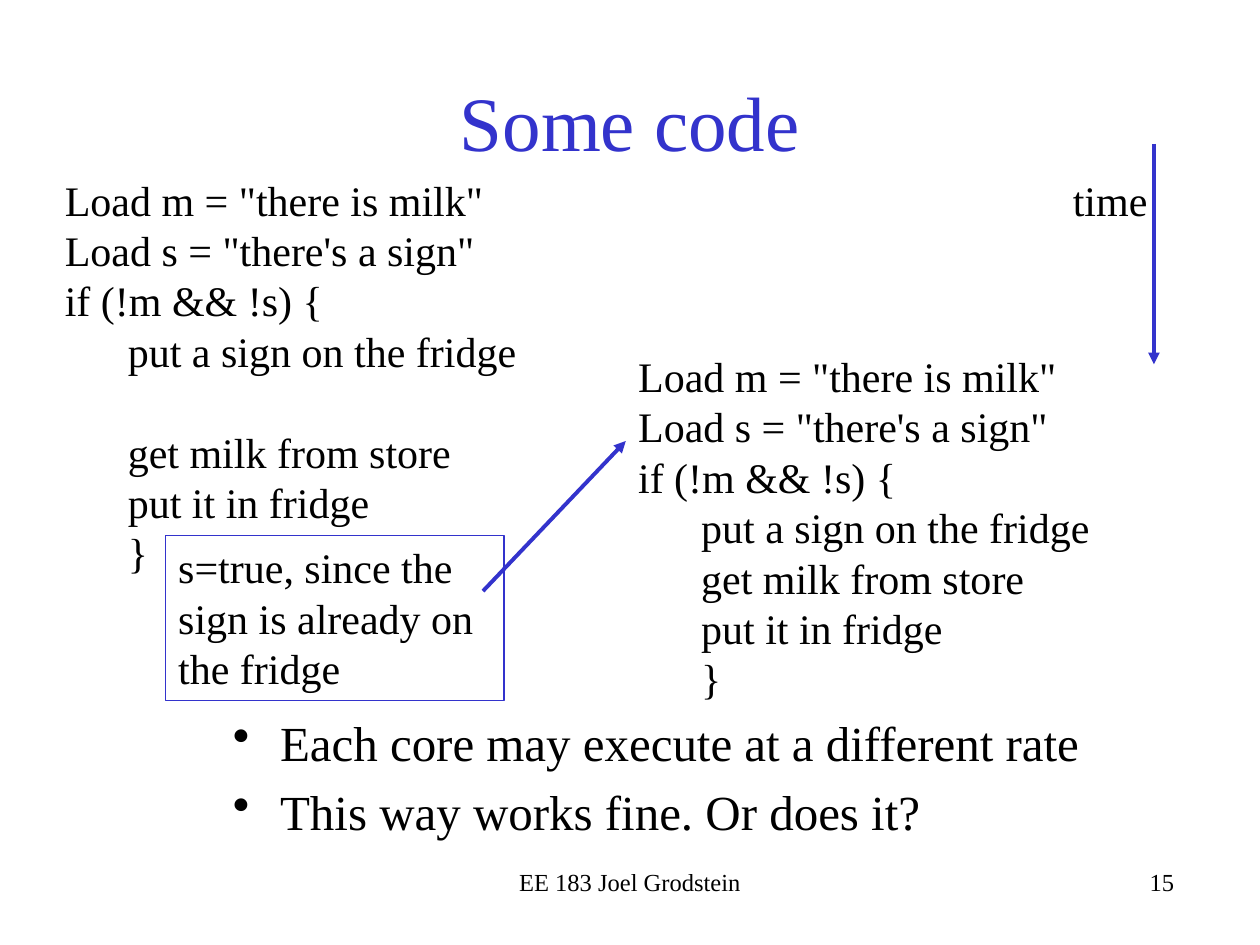
import pptx
import pptx.dml.color
import pptx.enum.shapes
import pptx.enum.text
import pptx.oxml
import pptx.oxml.ns
import pptx.util
from lxml import etree

Pt = pptx.util.Pt
ALIGN = pptx.enum.text.PP_ALIGN
BLUE, BLACK = "3333CC", "000000"

deck = pptx.Presentation()
deck.slide_width = pptx.util.Inches(10)
deck.slide_height = pptx.util.Inches(7.5)
slide = deck.slides.add_slide(deck.slide_layouts[6])

# The slide is a grid of 120 columns by 90 rows
UNIT = deck.slide_width / 120


def color(hex_value):
    return pptx.dml.color.RGBColor.from_string(hex_value)


def write(grid_box, lines, size=24, hue=BLACK, align=ALIGN.LEFT):
    """Add a text box at (column, row, columns, rows) with one paragraph a line."""
    box = slide.shapes.add_textbox(*(round(n * UNIT) for n in grid_box))
    box.text_frame.word_wrap = True
    box.text_frame.text = "\n".join(lines)
    for paragraph in box.text_frame.paragraphs:
        paragraph.alignment = align
        style = {"name": "Times New Roman", "size": Pt(size)}
        for key, value in style.items():
            setattr(paragraph.font, key, value)
        paragraph.font.color.rgb = color(hue)
    return box


write((38, 82, 75, 6), ["15"], size=14, align=ALIGN.RIGHT)
title = write((9, 4, 102, 15), ["Some code"], size=44, hue=BLUE, align=ALIGN.CENTER)
title.text_frame.vertical_anchor = pptx.enum.text.MSO_ANCHOR.MIDDLE

remarks = write((21, 67.3, 91.7, 14.8),
                ["Each core may execute at a different rate",
                 "This way works fine. Or does it?"], size=28)
for paragraph in remarks.text_frame.paragraphs:
    paragraph.space_before = Pt(5.6)
    properties = paragraph._p.get_or_add_pPr()
    properties.set("marL", str(Pt(27)))
    properties.set("indent", str(-Pt(27)))
    bullet = etree.SubElement(properties, pptx.oxml.ns.qn("a:buChar"))
    bullet.set("char", "•")

write((41, 82, 38, 6), ["EE 183 Joel Grodstein"], size=14, align=ALIGN.CENTER)

# Both cores run the same code; the first one pauses before getting milk
code = ['Load m = "there is milk"', 'Load s = "there\'s a sign"', "if (!m && !s) {",
        "put a sign on the fridge", "get milk from store", "put it in fridge", "}"]
first_core = write((5, 16, 49, 30.2), code)
second_core = write((59.6, 32.8, 53, 34.1), code)
for core in (first_core, second_core):
    for paragraph in core.text_frame.paragraphs[3:]:
        paragraph._p.get_or_add_pPr().set("marL", str(Pt(36)))
first_core.text_frame.paragraphs[4].space_before = Pt(28.8)

reason = write((15.8, 51, 32.2, 15.7), ["s=true, since the sign is already on the fridge"])
reason.line.color.rgb = color(BLUE)
reason.line.width = Pt(0.75)

arrows = {"reason": (46, 56.3, 59.6, 42), "time": (109.9, 13.7, 109.9, 34.7)}
for ends in arrows.values():
    arrow = slide.shapes.add_connector(pptx.enum.shapes.MSO_CONNECTOR.STRAIGHT,
                                       *(round(n * UNIT) for n in ends))
    arrow.line.color.rgb = color(BLUE)
    arrow.line.width = Pt(2.25)
    head = etree.SubElement(arrow.line._get_or_add_ln(), pptx.oxml.ns.qn("a:tailEnd"))
    head.set("type", "triangle")
    etree.SubElement(arrow._element.spPr, pptx.oxml.ns.qn("a:effectLst"))

write((101, 16, 12, 6), ["time"])

deck.save("out.pptx")
